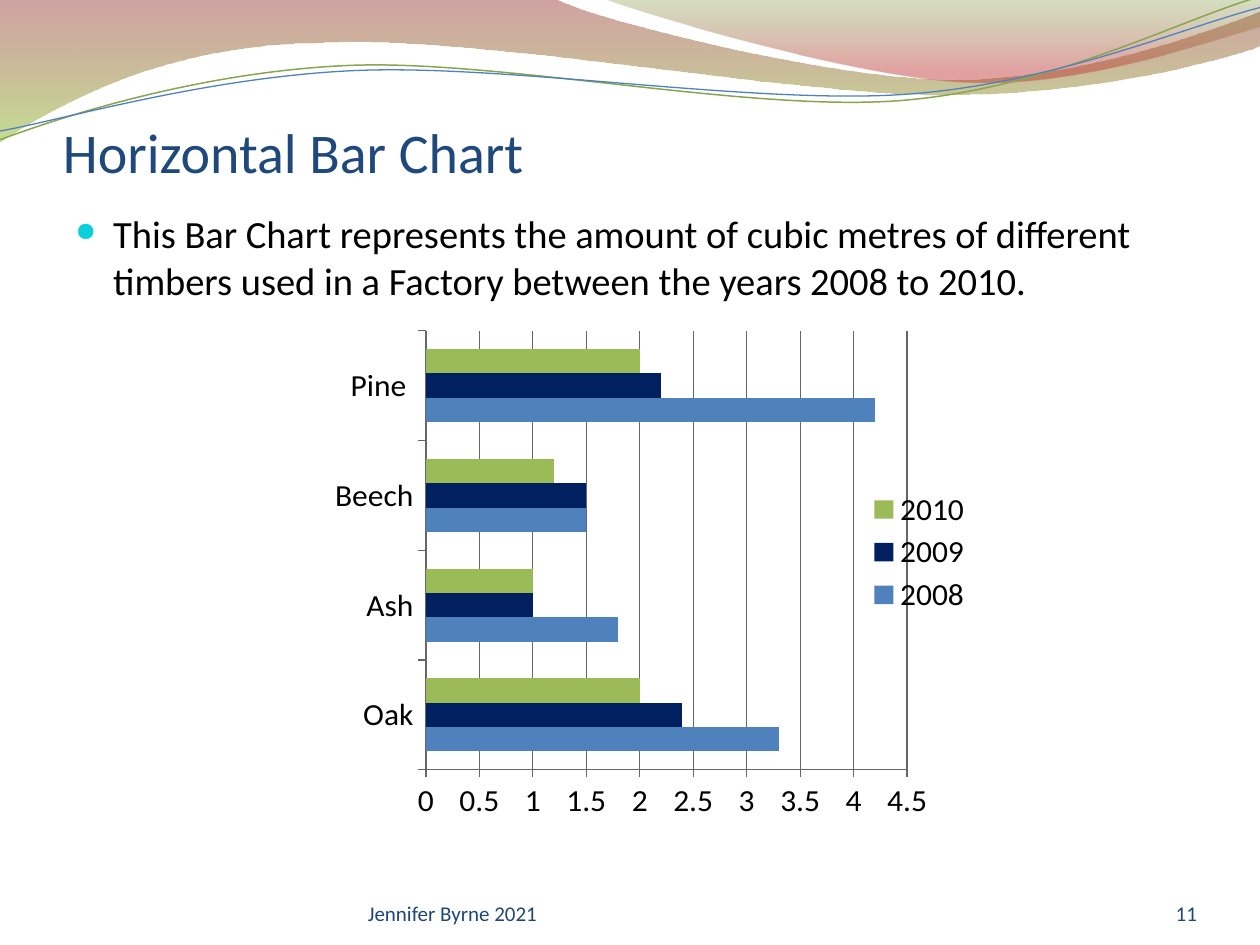
import pptx
import pptx.chart.data
import pptx.dml.color
import pptx.enum.chart
import pptx.enum.text
import pptx.oxml
import pptx.oxml.ns
import pptx.util
from pptx.util import Inches, Pt

A_NS = pptx.oxml.ns.nsdecls("a")
C_NS = pptx.oxml.ns.nsdecls("c")
ANCHOR = pptx.enum.text.MSO_ANCHOR
ALIGN = pptx.enum.text.PP_ALIGN


def rgb(hex_color):
    return pptx.dml.color.RGBColor.from_string(hex_color)


def layout_xml(box, chart_size, target=""):
    """Manual chart layout for a box in inches inside the chart."""
    fractions = (length / chart_size[i % 2] for i, length in enumerate(box))
    sizes = "".join(f'<c:{key} val="{value:.4f}"/>' for key, value in zip("xywh", fractions))
    return pptx.oxml.parse_xml(
        f'<c:layout {C_NS}><c:manualLayout>{target}<c:xMode val="edge"/>'
        f'<c:yMode val="edge"/>{sizes}</c:manualLayout></c:layout>')


class SlideBuilder:
    font_name = "Calibri"
    text_color = "000000"
    grid_color = "666666"

    def __init__(self, slide):
        self.slide = slide

    def outline(self, start, segments, closed):
        """Freeform whose segments are points (two numbers) or Bezier curves (six)."""
        builder = self.slide.shapes.build_freeform(*map(Inches, start))
        for segment in segments:
            lengths = [Inches(number) for number in segment]
            builder.add_line_segments(list(zip(lengths[::2], lengths[1::2])), close=False)
        if closed:
            builder.add_line_segments([], close=True)
        shape = builder.convert_to_shape()
        shape.shadow.inherit = False

        lines = iter(list(shape.element.iter(pptx.oxml.ns.qn("a:lnTo"))))
        for segment in segments:
            parts = [next(lines) for _ in segment[::2]]
            if len(parts) == 3:
                curve = pptx.oxml.parse_xml(f"<a:cubicBezTo {A_NS}/>")
                parts[0].addprevious(curve)
                for part in parts:
                    curve.append(part[0])
                    part.getparent().remove(part)
        return shape

    def band(self, start, segments, stops):
        """Closed shape with a top-to-bottom gradient of (position, colour, opacity)."""
        shape = self.outline(start, segments, True)
        shape.line.fill.background()
        shape.fill.background()
        stops_xml = "".join(
            f'<a:gs pos="{position * 1000}"><a:srgbClr val="{color}">'
            f'<a:alpha val="{opacity * 1000}"/></a:srgbClr></a:gs>'
            for position, color, opacity in stops)
        gradient = pptx.oxml.parse_xml(
            f'<a:gradFill {A_NS} rotWithShape="1"><a:gsLst>{stops_xml}</a:gsLst>'
            '<a:lin ang="5400000" scaled="0"/></a:gradFill>')
        properties = shape.element.spPr
        properties.replace(properties.find(pptx.oxml.ns.qn("a:noFill")), gradient)

    def wave(self, start, curves, color, width):
        shape = self.outline(start, curves, False)
        shape.fill.background()
        shape.line.color.rgb = rgb(color)
        shape.line.width = Pt(width)

    def text(self, words, box, size, color, anchor=ANCHOR.BOTTOM, align=ALIGN.LEFT,
             insets=(0, 0, 0, 0)):
        frame = self.slide.shapes.add_textbox(*map(Inches, box)).text_frame
        frame.word_wrap = True
        frame.vertical_anchor = anchor
        (frame.margin_left, frame.margin_top,
         frame.margin_right, frame.margin_bottom) = map(Inches, insets)
        paragraph = frame.paragraphs[0]
        paragraph.text = words
        paragraph.alignment = align
        paragraph.font.name = self.font_name
        paragraph.font.size = Pt(size)
        paragraph.font.color.rgb = rgb(color)
        return paragraph

    def bullet(self, words, box, size, bullet_color):
        paragraph = self.text(words, box, size, self.text_color, ANCHOR.TOP,
                              insets=(0.1, 0.05, 0.1, 0.05))
        paragraph.space_before = Pt(size * 0.2)
        properties = paragraph._p.get_or_add_pPr()
        properties.set("marL", str(Inches(0.3)))
        properties.set("indent", str(Inches(-0.3)))
        default_run = properties.find(pptx.oxml.ns.qn("a:defRPr"))
        for mark in (f'<a:buClr {A_NS}><a:srgbClr val="{bullet_color}"/></a:buClr>',
                     f'<a:buSzPct {A_NS} val="68000"/>',
                     f'<a:buChar {A_NS} char="●"/>'):
            default_run.addprevious(pptx.oxml.parse_xml(mark))

    def bar_chart(self, box, categories, series, plot_box, legend_box):
        data = pptx.chart.data.CategoryChartData()
        data.categories = categories
        for name, values, _ in series:
            data.add_series(name, values)
        chart = self.slide.shapes.add_chart(
            pptx.enum.chart.XL_CHART_TYPE.BAR_CLUSTERED, *map(Inches, box), data).chart
        chart.has_title = False
        chart.font.name = self.font_name
        chart.font.size = Pt(18)
        chart.font.color.rgb = rgb(self.text_color)

        plot = chart.plots[0]
        plot.gap_width = 150
        plot.vary_by_categories = False
        for bars, (_, _, color) in zip(plot.series, series):
            bars.format.fill.solid()
            bars.format.fill.fore_color.rgb = rgb(color)

        value_axis = chart.value_axis
        value_axis.has_major_gridlines = True
        for axis in (chart.category_axis, value_axis):
            axis.major_tick_mark = pptx.enum.chart.XL_TICK_MARK.OUTSIDE
        for lines in (chart.category_axis, value_axis, value_axis.major_gridlines):
            lines.format.line.color.rgb = rgb(self.grid_color)
            lines.format.line.width = Pt(0.75)

        chart.has_legend = True
        chart.legend.position = pptx.enum.chart.XL_LEGEND_POSITION.RIGHT
        chart.legend.include_in_layout = False

        plot_area = chart._chartSpace.chart.plotArea
        legend = chart.legend._element
        for part in (plot_area, legend):
            for old_layout in part.findall(pptx.oxml.ns.qn("c:layout")):
                part.remove(old_layout)
        plot_area.insert(0, layout_xml(plot_box, box[2:], '<c:layoutTarget val="inner"/>'))
        legend.find(pptx.oxml.ns.qn("c:legendPos")).addnext(layout_xml(legend_box, box[2:]))


def main():
    deck = pptx.Presentation()
    deck.slide_width, deck.slide_height = Inches(10), Inches(7.5)
    page = SlideBuilder(deck.slides.add_slide(deck.slide_layouts[6]))

    page.band((0, -0.01), [
        (4.4, -0.01),
        (4.76, 0.17, 6.64, 0.63, 7.58, 0.63), (8.53, 0.63, 9.58, 0.26, 10, 0.09),
        (10.01, 0.36),
        (9.83, 0.44, 8.7, 0.76, 7.46, 0.75), (6.22, 0.75, 3.82, 0.28, 2.57, 0.34),
        (1.29, 0.35, 0.46, 0.83, -0.01, 1.13),
    ], [(0, "973330", 45), (100, "95C238", 55)])
    page.band((4.79, -0.01), [
        (5.09, 0.11, 6.82, 0.62, 7.69, 0.65), (8.56, 0.69, 9.61, 0.32, 10, 0.21),
        (10, 0),
    ], [(0, "769537", 30), (80, "BE3330", 45)])

    page.wave((0, 1.11), [
        (0.48, 0.93, 1.58, 0.57, 2.77, 0.52), (3.95, 0.47, 5.93, 0.89, 7.13, 0.8),
        (8.33, 0.71, 9.38, 0.15, 9.98, -0.02)], "89A54F", 0.85)
    page.wave((0, 1.04), [
        (0.47, 0.96, 1.64, 0.61, 2.83, 0.56), (4.03, 0.51, 5.97, 0.83, 7.17, 0.75),
        (8.36, 0.67, 9.41, 0.21, 10, 0.06)], "4F81BD", 0.75)

    page.text("Horizontal Bar Chart", (0.5, 0.77, 9, 0.7), 32, "1F497D",
              insets=(0, 0.05, 0, 0))
    page.bullet("This Bar Chart represents the amount of cubic metres of different timbers "
                "used in a Factory between the years 2008 to 2010.",
                (0.5, 1.62, 9, 5.29), 22, "0BD0D9")
    page.text("Jennifer Byrne 2021", (2.92, 6.95, 3.67, 0.4), 12, "1E4677")
    page.text("11", (8.67, 6.95, 0.83, 0.4), 12, "1E4677", align=ALIGN.RIGHT)
    page.bar_chart((2.22, 2.49, 5.55, 4.01), ["Oak", "Ash", "Beech", "Pine "], [
        ("2008", (3.3, 1.8, 1.5, 4.2), "4F81BD"),
        ("2009", (2.4, 1, 1.5, 2.2), "002060"),
        ("2010", (2, 1, 1.2, 2), "9BBB59"),
    ], plot_box=(1.16, 0.14, 3.82, 3.58), legend_box=(4.68, 1.4, 0.83, 1.09))

    deck.save("out.pptx")


if __name__ == "__main__":
    main()
